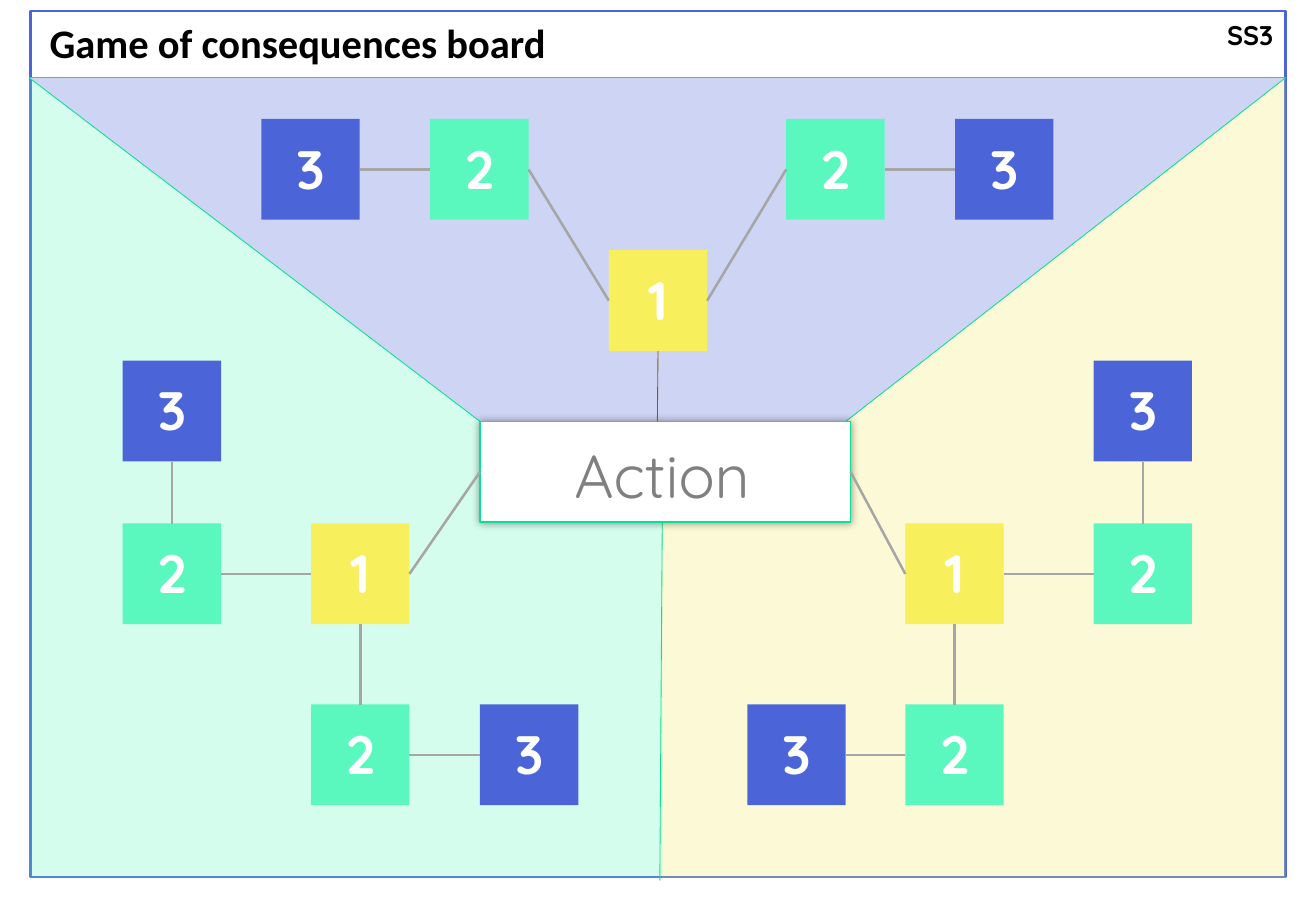
"""Build the game of consequences board: three panels of numbered tiles around an action."""
from lxml import etree
from pptx import Presentation
from pptx.dml.color import RGBColor
from pptx.enum.shapes import MSO_CONNECTOR, MSO_SHAPE
from pptx.enum.text import MSO_ANCHOR, PP_ALIGN
from pptx.oxml.ns import qn
from pptx.util import Inches, Pt

RECTANGLE = MSO_SHAPE.RECTANGLE
STRAIGHT = MSO_CONNECTOR.STRAIGHT
LEFT_ALIGN, CENTER = PP_ALIGN.LEFT, PP_ALIGN.CENTER
MIDDLE = MSO_ANCHOR.MIDDLE
TOP, LEFT, BOTTOM, RIGHT = range(4)

WIDTH, HEIGHT = 10.83, 7.5
BLUE, GREEN, YELLOW = "4B65D9", "5AF8BE", "F7EF5C"
WHITE, BLACK, EDGE, GREY = "FFFFFF", "000000", "0AE094", "A6A6A6"
TILE_FILLS = {"1": YELLOW, "2": GREEN, "3": BLUE}
TILE_WIDTH, TILE_HEIGHT = 0.81, 0.83
COLUMNS = [1.01, 2.15, 2.56, 3.54, 3.95, 5.01, 6.15, 6.47, 7.45, 7.86, 9]
ROWS = [0.98, 2.06, 2.97, 4.31, 5.8]
BOARD_LEFT, BOARD_RIGHT, BOARD_TOP, BOARD_BOTTOM = 0.24, 10.58, 0.64, 7.23
ACTION_LEFT, ACTION_RIGHT, ACTION_TOP, ACTION_BOTTOM = 3.95, 7, 3.47, 4.3
SPLIT = 5.45

color = RGBColor.from_string
deck = Presentation()
deck.slide_width, deck.slide_height = Inches(WIDTH), Inches(HEIGHT)
page = deck.slides.add_slide(deck.slide_layouts[6])


def write(shape, text, size, font, ink, bold, align):
    """Put one styled run into a shape."""
    shape.text_frame.word_wrap = True
    para = shape.text_frame.paragraphs[0]
    para.alignment = align
    span = para.add_run()
    span.text = text
    span.font.size, span.font.name, span.font.bold = Pt(size), font, bold
    span.font.color.rgb = color(ink)


def draw_line(start, end, ink, weight):
    """Draw a straight line without shadow between two points in inches."""
    ends = [Inches(length) for length in (*start, *end)]
    line = page.shapes.add_connector(STRAIGHT, *ends)
    line.line.color.rgb = color(ink)
    line.line.width = Pt(weight)
    etree.SubElement(line._element.spPr, qn("a:effectLst"))
    return line


frame = page.shapes.add_shape(
    RECTANGLE, Inches(0.25), Inches(0.09), Inches(10.33), Inches(7.13))
frame.shadow.inherit = False
frame.fill.background()
frame.line.color.rgb = color(BLUE)
frame.line.width = Pt(1.5)

top_left, top_right = (BOARD_LEFT, BOARD_TOP), (BOARD_RIGHT, BOARD_TOP)
panels = [
    ("CDD4F4", 100, [top_left, (ACTION_LEFT, ACTION_TOP),
                     (6.96, ACTION_TOP), top_right]),
    (YELLOW, 25, [top_right, (6.96, ACTION_TOP), (ACTION_RIGHT, ACTION_TOP),
                  (ACTION_RIGHT, ACTION_BOTTOM), (SPLIT, ACTION_BOTTOM),
                  (SPLIT, BOARD_BOTTOM), (BOARD_RIGHT, BOARD_BOTTOM)]),
    (GREEN, 25, [top_left, (ACTION_LEFT, ACTION_TOP), (ACTION_LEFT, ACTION_BOTTOM),
                 (SPLIT, ACTION_BOTTOM), (SPLIT, BOARD_BOTTOM),
                 (BOARD_LEFT, BOARD_BOTTOM)]),
]
for fill, opacity, corners in panels:
    points = [(Inches(across), Inches(down)) for across, down in corners]
    outline = page.shapes.build_freeform(*points[0])
    outline.add_line_segments(points[1:], close=True)
    panel = outline.convert_to_shape()
    panel.shadow.inherit = False
    panel.line.fill.background()
    panel.fill.solid()
    panel.fill.fore_color.rgb = color(fill)
    if opacity < 100:
        tint = panel._element.spPr.find(qn("a:solidFill"))[0]
        etree.SubElement(tint, qn("a:alpha"), val=str(opacity * 1000))

tiles = {}
for name, number, column, row in [
    ("top 1", "1", 5, 1), ("left 1", "1", 2, 3), ("right 1", "1", 8, 3),
    ("top 2 left", "2", 3, 0), ("top 2 right", "2", 7, 0),
    ("left 2 side", "2", 0, 3), ("left 2 below", "2", 2, 4),
    ("right 2 side", "2", 10, 3), ("right 2 below", "2", 8, 4),
    ("top 3 left", "3", 1, 0), ("top 3 right", "3", 9, 0),
    ("left 3 side", "3", 0, 2), ("left 3 below", "3", 4, 4),
    ("right 3 side", "3", 10, 2), ("right 3 below", "3", 6, 4),
]:
    tile = page.shapes.add_shape(
        RECTANGLE, Inches(COLUMNS[column]), Inches(ROWS[row]),
        Inches(TILE_WIDTH), Inches(TILE_HEIGHT))
    tile.shadow.inherit = False
    tile.fill.solid()
    tile.fill.fore_color.rgb = color(TILE_FILLS[number])
    tile.line.fill.background()
    tile.text_frame.vertical_anchor = MIDDLE
    tile.text_frame.margin_bottom = Inches(0.08)
    write(tile, number, 32, "Quicksand", WHITE, True, CENTER)
    tiles[name] = tile

for start, end in [
    (top_left, (ACTION_LEFT, ACTION_TOP)),
    (top_right, (6.96, ACTION_TOP)),
    (top_left, top_right),
    ((SPLIT, ACTION_BOTTOM), (5.43, 7.25)),
]:
    draw_line(start, end, EDGE, 0.5)

action = page.shapes.add_shape(
    RECTANGLE, Inches(ACTION_LEFT), Inches(ACTION_TOP),
    Inches(ACTION_RIGHT - ACTION_LEFT), Inches(ACTION_BOTTOM - ACTION_TOP))
action.shadow.inherit = False
action.fill.solid()
action.fill.fore_color.rgb = color(WHITE)
action.line.color.rgb = color(EDGE)
action.line.width = Pt(1)
glow = etree.SubElement(
    action._element.spPr.find(qn("a:effectLst")), qn("a:outerShdw"),
    blurRad=str(Pt(5)), dist="0", dir="0", algn="ctr", rotWithShape="0")
shade = etree.SubElement(glow, qn("a:srgbClr"), val=BLACK)
etree.SubElement(shade, qn("a:alpha"), val="40000")
action.text_frame.vertical_anchor = MIDDLE
action.text_frame.margin_top = Inches(0.08)
action.text_frame.margin_right = Inches(0.15)
write(action, "Action", 36, "Quicksand", "808080", False, CENTER)
tiles["action"] = action

stem = draw_line((5.41, 2.89), (5.41, ACTION_TOP), "806000", 0.5)
stem.begin_connect(tiles["top 1"], BOTTOM)
for start, start_side, end, end_side in [
    ("action", LEFT, "left 1", RIGHT),
    ("action", RIGHT, "right 1", LEFT),
    ("top 1", LEFT, "top 2 left", RIGHT),
    ("top 1", RIGHT, "top 2 right", LEFT),
    ("top 2 left", LEFT, "top 3 left", RIGHT),
    ("top 2 right", RIGHT, "top 3 right", LEFT),
    ("left 2 side", TOP, "left 3 side", BOTTOM),
    ("right 2 side", TOP, "right 3 side", BOTTOM),
    ("left 2 below", RIGHT, "left 3 below", LEFT),
    ("right 2 below", LEFT, "right 3 below", RIGHT),
    ("left 1", LEFT, "left 2 side", RIGHT),
    ("left 1", BOTTOM, "left 2 below", TOP),
    ("right 1", RIGHT, "right 2 side", LEFT),
    ("right 1", BOTTOM, "right 2 below", TOP),
]:
    link = draw_line((0, 0), (1, 1), GREY, 1.5)
    link.begin_connect(tiles[start], start_side)
    link.end_connect(tiles[end], end_side)

for text, left, width, height, size, font in [
    ("Game of consequences board", 0.31, 8.66, 0.5, 24, "Calibri"),
    ("SS3", 10, 0.8, 0.37, 16, "Quicksand"),
]:
    box = page.shapes.add_textbox(
        Inches(left), Inches(0.1), Inches(width), Inches(height))
    write(box, text, size, font, BLACK, True, LEFT_ALIGN)

deck.save("out.pptx")
